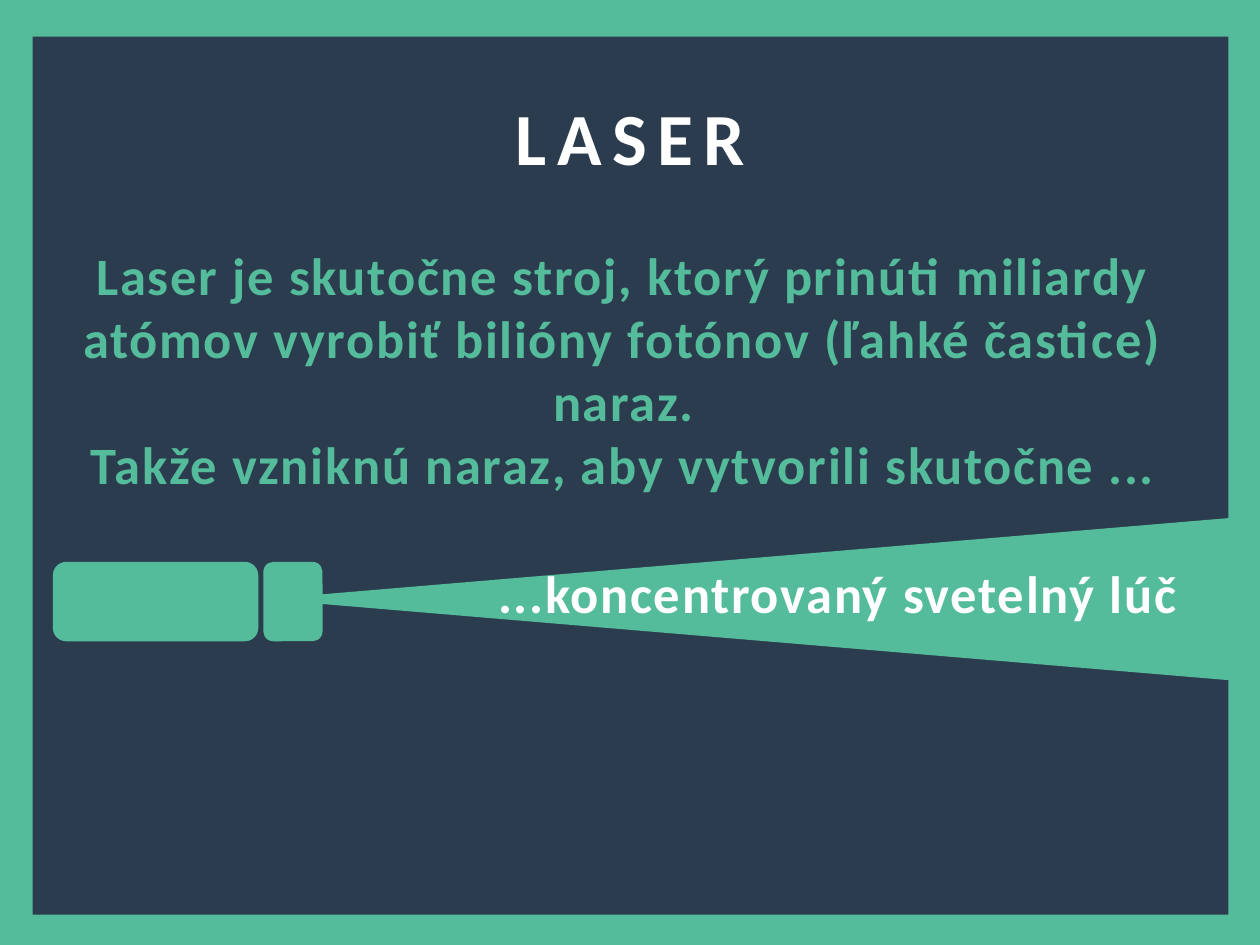
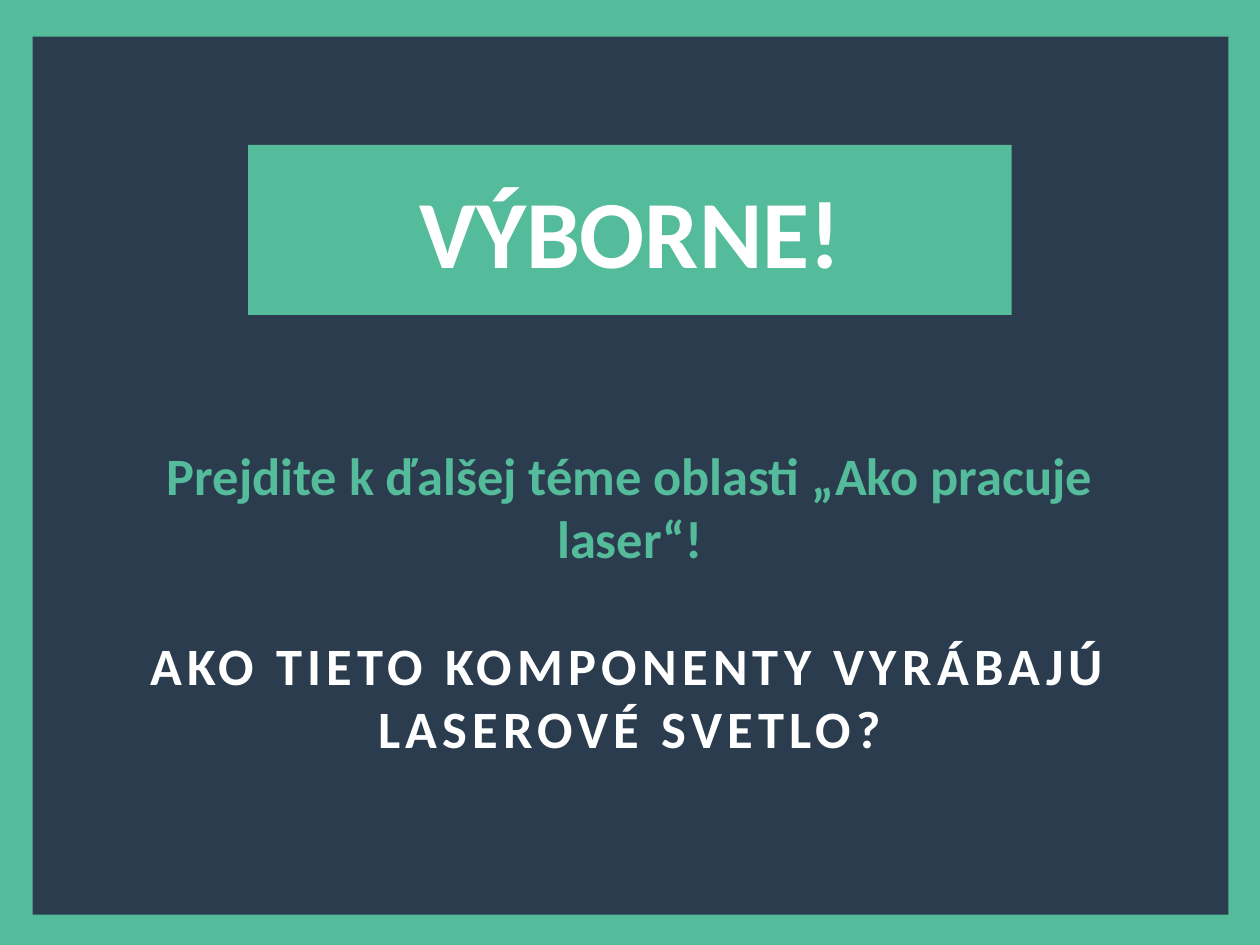
from dataclasses import dataclass

from pptx import Presentation
from pptx.dml.color import RGBColor
from pptx.enum.shapes import MSO_SHAPE
from pptx.enum.text import MSO_ANCHOR, MSO_AUTO_SIZE, PP_ALIGN
from pptx.util import Inches, Pt

COLORS = {"mint": "54BC9B", "navy": "2C3C4F", "white": "FFFFFF"}
FONT = "Calibri"
BODY_SIZE = 30
BLANK_LINE = 36.6


@dataclass
class Area:
    left: float
    top: float
    width: float
    height: float

    def lengths(self):
        return [Inches(value) for value in (self.left, self.top, self.width, self.height)]


@dataclass
class Line:
    text: str
    color: str = "mint"
    size: float = BODY_SIZE
    tracking: float = 0
    before: float = 0


@dataclass
class Block:
    area: Area
    color: str = "mint"
    kind: MSO_SHAPE = MSO_SHAPE.ROUNDED_RECTANGLE
    rotation: float = 0


PANEL = Block(Area(0.26, 0.29, 9.49, 6.97), "navy", MSO_SHAPE.RECTANGLE)
LASER_POINTER = [
    Block(Area(0.42, 4.46, 1.63, 0.63)),
    Block(Area(2.09, 4.46, 0.47, 0.63)),
    Block(Area(5.34, 0.86, 1.31, 7.79), kind=MSO_SHAPE.ISOSCELES_TRIANGLE, rotation=270),
]


def rgb(name: str) -> RGBColor:
    return RGBColor.from_string(COLORS[name])


def add_block(page, block: Block):
    shape = page.shapes.add_shape(block.kind, *block.area.lengths())
    shape.shadow.inherit = False
    shape.fill.solid()
    shape.fill.fore_color.rgb = rgb(block.color)
    shape.line.fill.background()
    shape.rotation = block.rotation
    return shape


def write(box, lines: list[Line], anchor=MSO_ANCHOR.TOP) -> None:
    frame = box.text_frame
    frame.text = "\n".join(line.text for line in lines)
    frame.word_wrap = True
    frame.auto_size = MSO_AUTO_SIZE.NONE
    frame.vertical_anchor = anchor
    for para, line in zip(frame.paragraphs, lines):
        para.alignment = PP_ALIGN.CENTER
        para.space_before = Pt(line.before)
        for span in para.runs:
            span.font.name = FONT
            span.font.size = Pt(line.size)
            span.font.bold = True
            span.font.color.rgb = rgb(line.color)
            span.font._element.set("spc", str(round(line.tracking * 100)))


def add_text(page, area: Area, lines: list[Line]) -> None:
    write(page.shapes.add_textbox(*area.lengths()), lines)


def add_page(deck, area: Area, heading: Line, anchor=MSO_ANCHOR.TOP):
    page = deck.slides.add_slide(deck.slide_layouts[5])
    page.background.fill.solid()
    page.background.fill.fore_color.rgb = rgb("mint")
    title = page.shapes.title
    title.left, title.top, title.width, title.height = area.lengths()
    write(title, [heading], anchor)
    title.element.addprevious(add_block(page, PANEL).element)
    return page


def add_laser_page(deck) -> None:
    page = add_page(deck, Area(0.26, 0.68, 9.49, 0.81), Line("LASER", "white", 42, 6))
    for block in LASER_POINTER:
        add_block(page, block)
    add_text(page, Area(0.26, 1.88, 9.38, 2.2), [
        Line("Laser je skutočne stroj, ktorý prinúti miliardy atómov vyrobiť "
             "bilióny fotónov (ľahké častice) naraz.", tracking=1),
        Line("Takže vzniknú naraz, aby vytvorili skutočne ...", tracking=1),
    ])
    add_text(page, Area(3.65, 4.4, 6, 0.61),
             [Line("...koncentrovaný svetelný lúč", "white", tracking=1)])


def add_praise_page(deck) -> None:
    page = add_page(deck, Area(1.97, 1.15, 6.06, 1.35),
                    Line("VÝBORNE!", "white", 55), MSO_ANCHOR.MIDDLE)
    page.shapes.title.fill.solid()
    page.shapes.title.fill.fore_color.rgb = rgb("mint")
    add_text(page, Area(0.63, 3.47, 8.74, 2.63), [
        Line("Prejdite k ďalšej téme oblasti „Ako pracuje laser“!"),
        Line("AKO TIETO KOMPONENTY VYRÁBAJÚ LASEROVÉ SVETLO?", "white",
             tracking=3, before=BLANK_LINE),
    ])


def main() -> None:
    deck = Presentation()
    deck.slide_width, deck.slide_height = Inches(10), Inches(7.5)
    add_laser_page(deck)
    add_praise_page(deck)
    deck.save("out.pptx")


if __name__ == "__main__":
    main()
